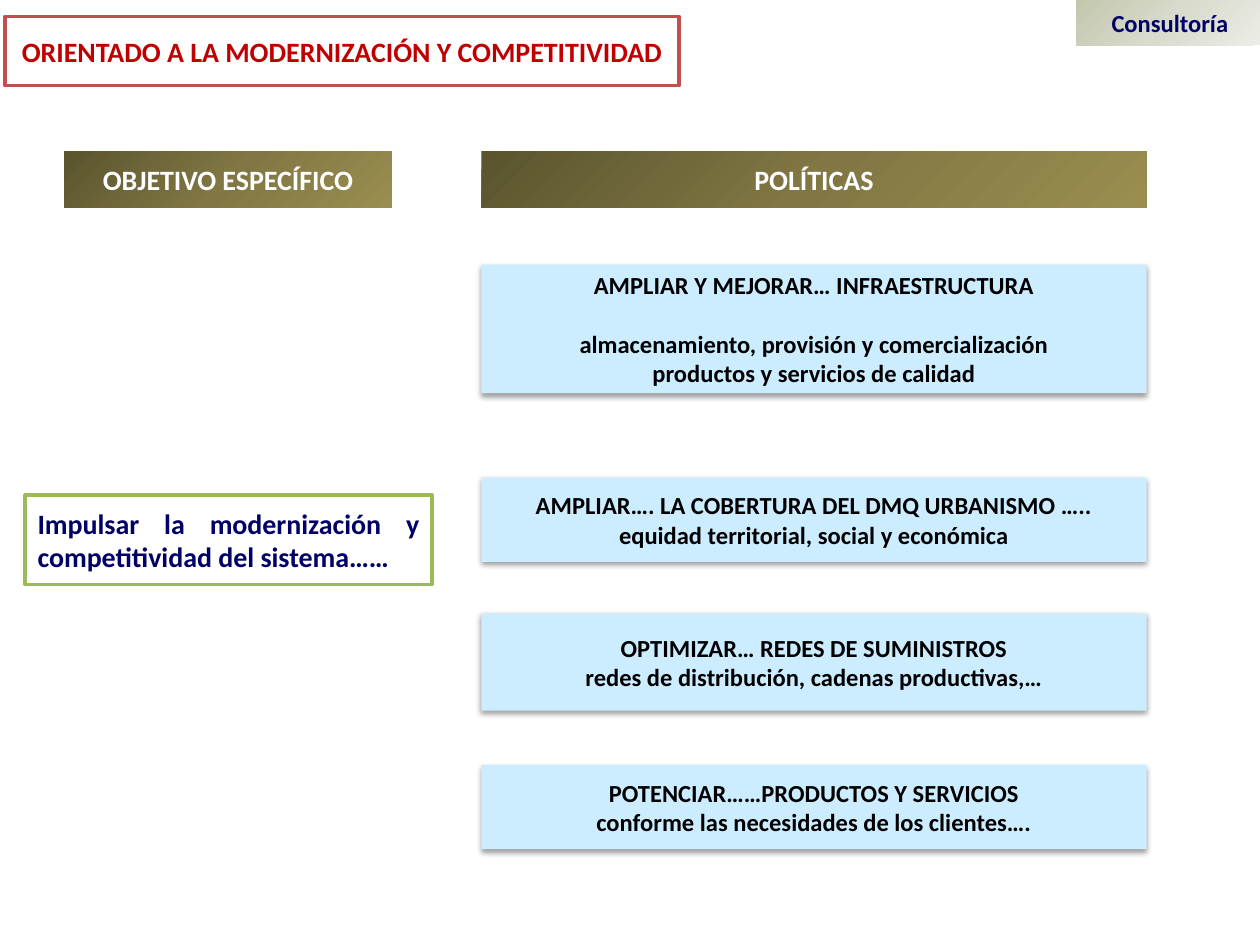
from lxml.etree import SubElement
from pptx import Presentation
from pptx.dml.color import RGBColor
from pptx.enum.shapes import MSO_SHAPE
from pptx.enum.text import MSO_ANCHOR, PP_ALIGN
from pptx.oxml.ns import qn
from pptx.util import Inches, Pt

COLORS = {
    "background": "FFFFFF", "light_text": "FFFFFF", "dark_text": "000000",
    "navy": "000066", "red": "C00000", "red_border": "C0504D",
    "green_border": "9BBB59", "policy": "CCECFF", "shadow": "000000",
}
HEADER_STOPS = {0: "5A542F", 50: "817743", 100: "998D4F"}
TAG_STOPS = {0: "C3C7AD", 50: "D9DBCD", 100: "ECEDE6"}
SLIDE_WIDTH, SLIDE_HEIGHT = Inches(10), Inches(7.5)

# Boxes are (left, top, width, height) in percent of the slide
TITLE_BOX = (0.4, 1.73, 53.5, 7.33)
TAG_BOX = (85.4, 0, 14.9, 4.8)
OBJECTIVE_BOX = (2, 52.4, 32.3, 9.47)
HEADER_TOP, HEADER_HEIGHT = 16, 6
OBJECTIVE_COLUMN = (5.1, 26)
POLICY_COLUMN = (38.2, 52.8)
BLANK_LINE = 17

# Top, height, then lines of text with the space before each in points
POLICIES = [
    (28, 13.6, [("AMPLIAR Y MEJORAR… INFRAESTRUCTURA", 0),
                ("almacenamiento, provisión y comercialización", BLANK_LINE),
                ("productos y servicios de calidad", 0)]),
    (50.53, 8.93, [("AMPLIAR…. LA COBERTURA DEL DMQ URBANISMO …..", 0),
                   ("equidad territorial, social y económica", 0)]),
    (64.93, 10.27, [("OPTIMIZAR… REDES DE SUMINISTROS", 0),
                    ("redes de distribución, cadenas productivas,…", 0)]),
    (80.93, 8.93, [("POTENCIAR……PRODUCTOS Y SERVICIOS", 0),
                   ("conforme las necesidades de los clientes….", 0)]),
]


def rgb(name):
    return RGBColor.from_string(COLORS[name])


def add_text(shape, lines, size, color, align):
    frame = shape.text_frame
    frame.word_wrap = True
    frame.vertical_anchor = MSO_ANCHOR.MIDDLE
    formats = {"name": "Calibri", "size": Pt(size), "bold": True}
    for index, (text, space) in enumerate(lines):
        paragraph = frame.add_paragraph() if index else frame.paragraphs[0]
        paragraph.alignment = align
        if space:
            paragraph.space_before = Pt(space)
        run = paragraph.add_run()
        run.text = text
        for attribute, value in formats.items():
            setattr(run.font, attribute, value)
        run.font.color.rgb = rgb(color)


def add_panel(slide, box, lines, size, color, fill=None, border=None,
              align=PP_ALIGN.CENTER):
    left, top, width, height = box
    shape = slide.shapes.add_shape(
        MSO_SHAPE.RECTANGLE,
        int(SLIDE_WIDTH * left / 100), int(SLIDE_HEIGHT * top / 100),
        int(SLIDE_WIDTH * width / 100), int(SLIDE_HEIGHT * height / 100))
    shape.shadow.inherit = False
    if fill:
        shape.fill.solid()
        shape.fill.fore_color.rgb = rgb(fill)
    if border:
        shape.line.color.rgb = rgb(border)
        shape.line.width = Pt(2)
    else:
        shape.line.fill.background()
    add_text(shape, lines, size, color, align)
    return shape


def set_gradient(shape, stops, radial=False):
    """Fill diagonally at 45 degrees, or in circles from the top left corner."""
    shape.fill.gradient()
    gradient = shape.element.spPr.find(qn("a:gradFill"))
    for child in list(gradient):
        gradient.remove(child)
    stop_list = SubElement(gradient, qn("a:gsLst"))
    for position, color in stops.items():
        stop = SubElement(stop_list, qn("a:gs"), pos=str(position * 1000))
        SubElement(stop, qn("a:srgbClr"), val=color)
    if radial:
        circle = SubElement(gradient, qn("a:path"), path="circle")
        SubElement(circle, qn("a:fillToRect"), r="100000", b="100000")
    else:
        SubElement(gradient, qn("a:lin"), ang=str(45 * 60000), scaled="0")


def add_shadow(shape):
    effects = shape.element.spPr.find(qn("a:effectLst"))
    shadow = SubElement(effects, qn("a:outerShdw"), blurRad=str(Pt(3.1)),
                        dist=str(Pt(1.6)), dir=str(90 * 60000),
                        rotWithShape="0")
    color = SubElement(shadow, qn("a:srgbClr"), val=COLORS["shadow"])
    SubElement(color, qn("a:alpha"), val="38000")


def add_header(slide, column, text):
    left, width = column
    box = (left, HEADER_TOP, width, HEADER_HEIGHT)
    header = add_panel(slide, box, [(text, 0)], 16, "light_text")
    set_gradient(header, HEADER_STOPS)


def add_title(slide, box):
    lines = [("ORIENTADO A LA MODERNIZACIÓN Y COMPETITIVIDAD", 0)]
    add_panel(slide, box, lines, 16, "red", "background", "red_border")


def add_objective(slide, box):
    lines = [("Impulsar la modernización y competitividad del sistema……", 0)]
    add_panel(slide, box, lines, 16, "navy", "background", "green_border",
              PP_ALIGN.JUSTIFY)


def add_policies(slide, column):
    left, width = column
    for top, height, lines in POLICIES:
        policy = add_panel(slide, (left, top, width, height), lines, 14,
                           "dark_text", "policy")
        add_shadow(policy)


def add_tag(slide, box):
    tag = add_panel(slide, box, [("Consultoría", 0)], 14, "navy")
    set_gradient(tag, TAG_STOPS, radial=True)


def main():
    presentation = Presentation()
    presentation.slide_width = SLIDE_WIDTH
    presentation.slide_height = SLIDE_HEIGHT
    slide = presentation.slides.add_slide(presentation.slide_layouts[6])
    add_header(slide, OBJECTIVE_COLUMN, "OBJETIVO ESPECÍFICO")
    add_objective(slide, OBJECTIVE_BOX)
    add_title(slide, TITLE_BOX)
    add_header(slide, POLICY_COLUMN, "POLÍTICAS")
    add_policies(slide, POLICY_COLUMN)
    add_tag(slide, TAG_BOX)
    presentation.save("out.pptx")


if __name__ == "__main__":
    main()
